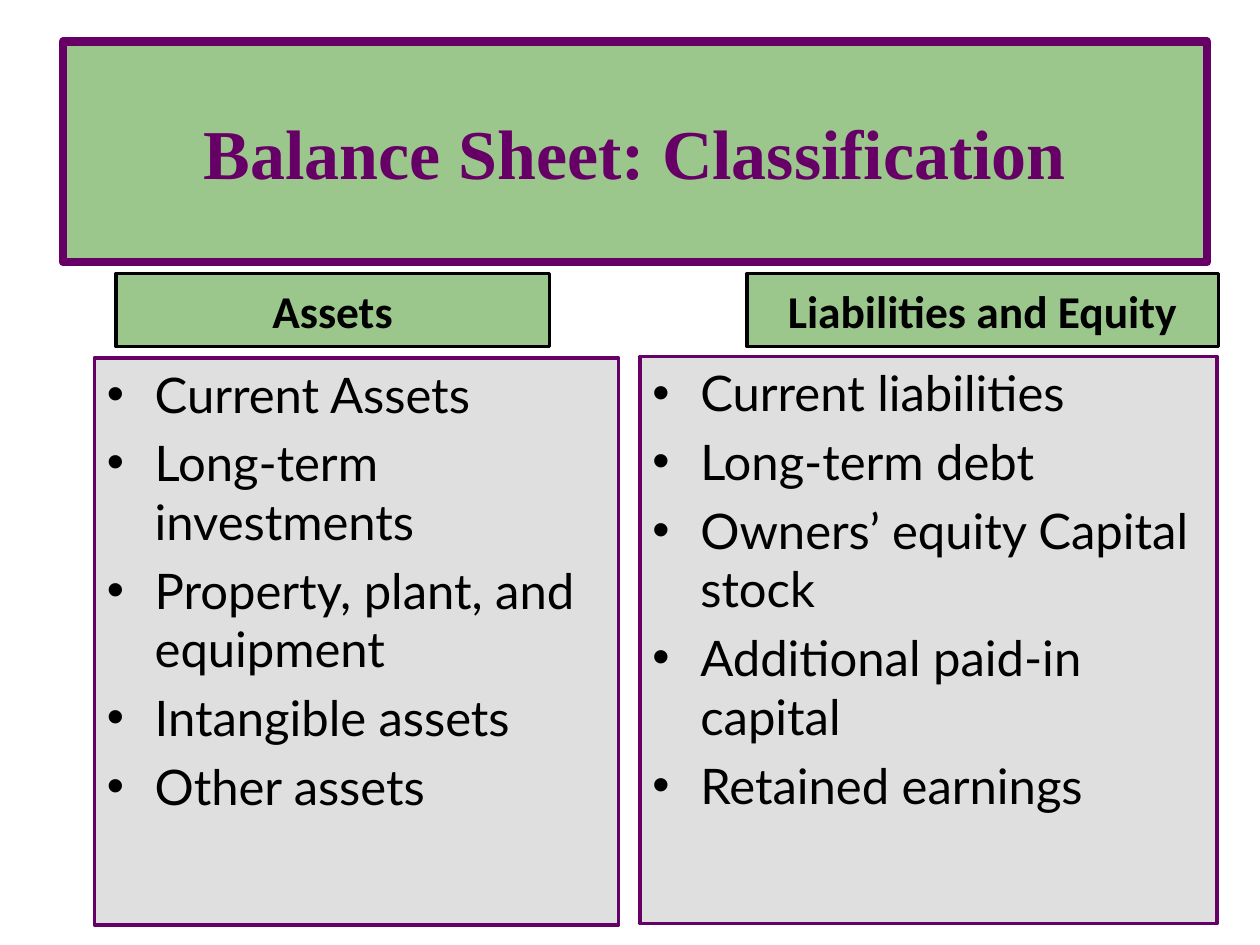
import pptx
import pptx.dml.color
import pptx.enum.shapes
import pptx.enum.text
import pptx.util
import lxml.etree
import pptx.oxml.ns

Inches, Pt = pptx.util.Inches, pptx.util.Pt
PURPLE, GREEN, GREY, BLACK = "660066", "9BC68C", "C0C0C0", "000000"
MIDDLE = pptx.enum.text.MSO_ANCHOR.MIDDLE
CENTER = pptx.enum.text.PP_ALIGN.CENTER


def paint(shape, fill, line, width):
    """Give a shape a solid fill and an outline, both as hex colours."""
    shape.fill.solid()
    shape.fill.fore_color.rgb = pptx.dml.color.RGBColor.from_string(fill)
    shape.line.color.rgb = pptx.dml.color.RGBColor.from_string(line)
    shape.line.width = Pt(width)


def add_run(paragraph, text, font, size, color, bold=False):
    run = paragraph.add_run()
    run.text = text
    run.font.name = font
    run.font.size = Pt(size)
    run.font.bold = bold
    run.font.color.rgb = pptx.dml.color.RGBColor.from_string(color)


presentation = pptx.Presentation()
presentation.slide_width = Inches(10)
presentation.slide_height = Inches(7.5)
slide = presentation.slides.add_slide(presentation.slide_layouts[5])

# Title banner
title = slide.shapes.title
title.left, title.top = Inches(0.5), Inches(0.33)
title.width, title.height = Inches(9.08), Inches(1.75)
paint(title, GREEN, PURPLE, 5)
title.text_frame.vertical_anchor = MIDDLE
title.text_frame.auto_size = pptx.enum.text.MSO_AUTO_SIZE.NONE
paragraph = title.text_frame.paragraphs[0]
paragraph.alignment = CENTER
add_run(paragraph, "Balance Sheet: Classification", "Times New Roman", 40, PURPLE, True)

# Each column: heading, heading left and width, list left, top and width, items
columns = [
    ("Assets", 0.92, 3.44, 0.75, 2.84, 4.16,
     ["Current Assets", "Long-term investments", "Property, plant, and equipment",
      "Intangible assets", "Other assets"]),
    ("Liabilities and Equity", 5.93, 3.74, 5.08, 2.83, 4.58,
     ["Current liabilities", "Long-term debt", "Owners’ equity Capital stock",
      "Additional paid-in capital", "Retained earnings"]),
]
RECTANGLE = pptx.enum.shapes.MSO_SHAPE.RECTANGLE
for heading, heading_left, heading_width, list_left, list_top, list_width, items in columns:
    panel = slide.shapes.add_shape(
        RECTANGLE, Inches(list_left), Inches(list_top), Inches(list_width), Inches(4.5))
    panel.shadow.inherit = False
    paint(panel, GREY, PURPLE, 2)
    fill_color = panel.fill._xPr.find(".//" + pptx.oxml.ns.qn("a:srgbClr"))
    lxml.etree.SubElement(fill_color, pptx.oxml.ns.qn("a:alpha"), val="50000")
    frame = panel.text_frame
    frame.word_wrap = True
    frame.vertical_anchor = pptx.enum.text.MSO_ANCHOR.TOP
    for index, item in enumerate(items):
        paragraph = frame.add_paragraph() if index else frame.paragraphs[0]
        paragraph.alignment = pptx.enum.text.PP_ALIGN.LEFT
        paragraph.space_before = Pt(5.6)
        properties = paragraph._p.get_or_add_pPr()
        properties.set("marL", str(Inches(0.38)))
        properties.set("indent", str(-Inches(0.38)))
        lxml.etree.SubElement(properties, pptx.oxml.ns.qn("a:buFont"), typeface="Arial")
        lxml.etree.SubElement(properties, pptx.oxml.ns.qn("a:buChar"), char="•")
        add_run(paragraph, item, "Lato", 28, BLACK)

    label = slide.shapes.add_shape(
        RECTANGLE, Inches(heading_left), Inches(2.17), Inches(heading_width), Inches(0.58))
    label.shadow.inherit = False
    paint(label, GREEN, BLACK, 2)
    frame = label.text_frame
    frame.word_wrap = False
    frame.vertical_anchor = MIDDLE
    frame.margin_left = frame.margin_right = frame.margin_top = frame.margin_bottom = 0
    paragraph = frame.paragraphs[0]
    paragraph.alignment = CENTER
    add_run(paragraph, heading, "Calibri", 26, BLACK, True)

presentation.save("out.pptx")
